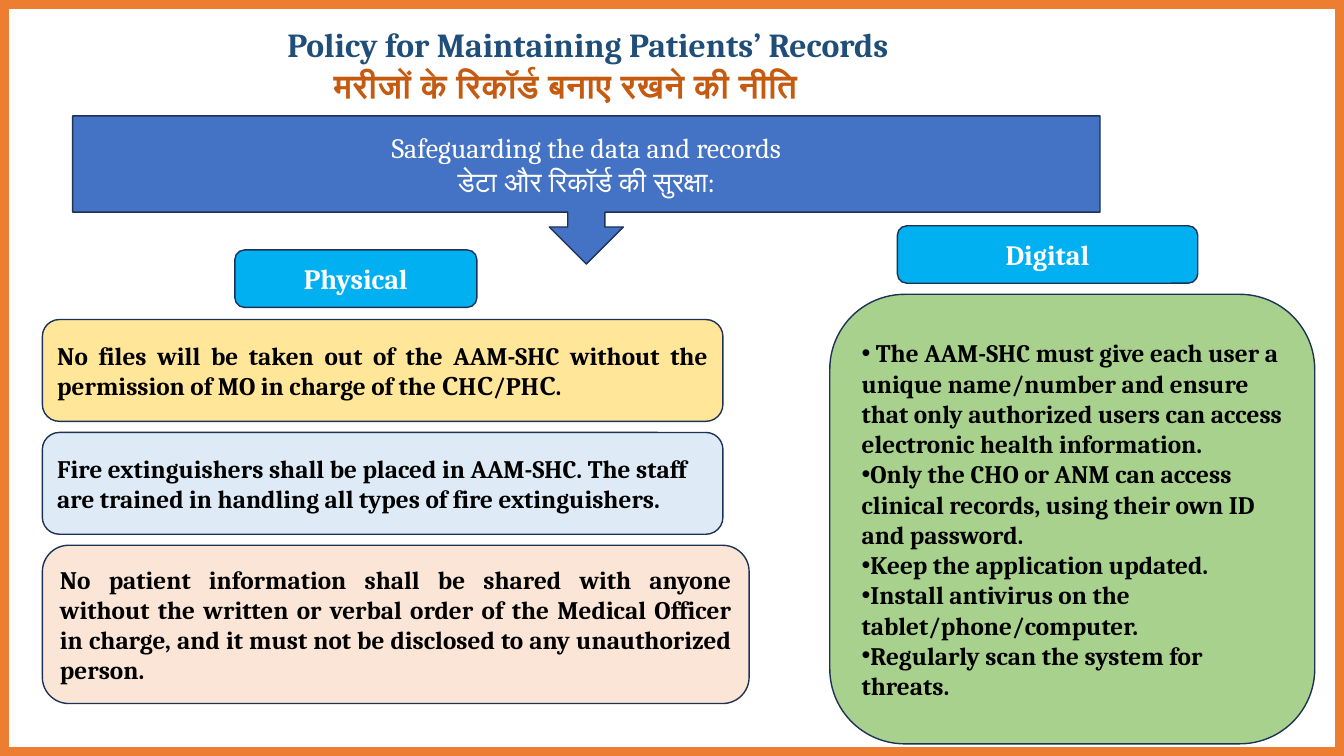
"""Build the slide on keeping patients' records safe."""
import pptx
import pptx.util
import pptx.dml.color
import pptx.enum.shapes
import pptx.enum.text
import pptx.oxml
import pptx.oxml.ns

Inches = pptx.util.Inches
Pt = pptx.util.Pt
Kind = pptx.enum.shapes.MSO_SHAPE
Align = pptx.enum.text.PP_ALIGN
Anchor = pptx.enum.text.MSO_ANCHOR
Fit = pptx.enum.text.MSO_AUTO_SIZE


def paint(target, code):
    target.rgb = pptx.dml.color.RGBColor.from_string(code)


def apply(target, values):
    for name, value in values.items():
        setattr(target, name, value)


class Deck:
    face = "Cambria"
    edge = "1E3256"

    def __init__(self, wide, high):
        self.show = pptx.Presentation()
        apply(self.show, {"slide_width": Inches(wide), "slide_height": Inches(high)})
        self.slide = self.show.slides.add_slide(self.show.slide_layouts[5])

    def place(self, item, box):
        names = ("left", "top", "width", "height")
        apply(item, dict(zip(names, map(Inches, box))))

    def line(self, frame, text, first, size, color, bold, align):
        para = frame.paragraphs[0] if first else frame.add_paragraph()
        apply(para, {"alignment": align, "line_spacing": 1.0,
                     "space_before": Pt(0), "space_after": Pt(0)})
        run = para.add_run()
        run.text = text
        apply(run.font, {"name": self.face, "size": Pt(size), "bold": bold})
        paint(run.font.color, color)
        return para

    def title(self, box, lines, size):
        head = self.slide.shapes.title
        self.place(head, box)
        frame = head.text_frame
        apply(frame, {"word_wrap": True, "vertical_anchor": Anchor.TOP,
                      "auto_size": Fit.SHAPE_TO_FIT_TEXT})
        for pos, (text, color, shift) in enumerate(lines):
            para = self.line(frame, text, pos == 0, size, color, True, Align.LEFT)
            para._p.get_or_add_pPr().set("marL", str(Inches(shift)))

    def shape(self, kind, box, fill, edge=None):
        item = self.slide.shapes.add_shape(kind, *map(Inches, box))
        item.shadow.inherit = False
        item.fill.solid()
        paint(item.fill.fore_color, fill)
        paint(item.line.color, edge or self.edge)
        item.line.width = Pt(1)
        return item

    def border(self, box, thick, fill):
        item = self.shape(Kind.FRAME, box, fill, fill)
        item.adjustments[0] = thick / min(box[2:])

    def card(self, box, fill, lines, kind=Kind.ROUNDED_RECTANGLE, size=18,
             color="000000", bold=True, align=Align.LEFT, dots=False):
        frame = self.shape(kind, box, fill).text_frame
        apply(frame, {"word_wrap": True, "vertical_anchor": Anchor.MIDDLE})
        for pos, text in enumerate(lines):
            para = self.line(frame, text, pos == 0, size, color, bold, align)
            if dots:
                self.dot(para)

    def dot(self, para):
        props = para._p.get_or_add_pPr()
        space = pptx.oxml.ns.nsdecls("a")
        for tag in ('buFont {} typeface="Arial"', 'buChar {} char="•"'):
            props.append(pptx.oxml.parse_xml(f"<a:{tag.format(space)}/>"))


def main():
    deck = Deck(13.33, 7.5)
    deck.border((0, 0, 13.33, 7.5), 0.08, "ED7D31")
    deck.title((2.75, 0.19, 8.16, 0.91), [
        ("Policy for Maintaining Patients’ Records", "1F4E79", 0),
        ("मरीजों के रिकॉर्ड बनाए रखने की नीति", "C55A11", 0.46)], 24)

    label = {"size": 20, "color": "FFFFFF", "align": Align.CENTER}
    deck.card((0.72, 1.15, 10.19, 1.47), "4472C4",
              ["Safeguarding the data and records", "डेटा और रिकॉर्ड की सुरक्षा:"],
              kind=Kind.DOWN_ARROW_CALLOUT, bold=False, **label)
    for text, box in (("Physical", (2.33, 2.48, 2.4, 0.57)),
                      ("Digital", (8.9, 2.24, 2.98, 0.57))):
        deck.card(box, "00B0F0", [text], **label)

    rules = [
        (6.75, 1.01, "FFE699", Align.JUSTIFY,
         "No files will be taken out of the AAM-SHC without the permission "
         "of MO in charge of the СHС/PHС."),
        (6.75, 1.01, "DEEBF7", Align.LEFT,
         "Fire extinguishers shall be placed in AAM-SHC. The staff are "
         "trained in handling all types of fire extinguishers."),
        (7.01, 1.57, "FBE5D6", Align.JUSTIFY,
         "No patient information shall be shared with anyone without the "
         "written or verbal order of the Medical Officer in charge, and it "
         "must not be disclosed to any unauthorized person.")]
    top = 3.17
    for wide, high, fill, align, text in rules:
        deck.card((0.42, top, wide, high), fill, [text], align=align)
        top += high + 0.11

    deck.card((8.23, 2.92, 4.81, 4.46), "A9D18E", [
        " The AAM-SHC must give each user a unique name/number and ensure "
        "that only authorized users can access electronic health information.",
        "Only the CHO or ANM can access clinical records, using their own ID "
        "and password.",
        "Keep the application updated.",
        "Install antivirus on the tablet/phone/computer.",
        "Regularly scan the system for threats."], dots=True)
    deck.show.save("out.pptx")


if __name__ == "__main__":
    main()
